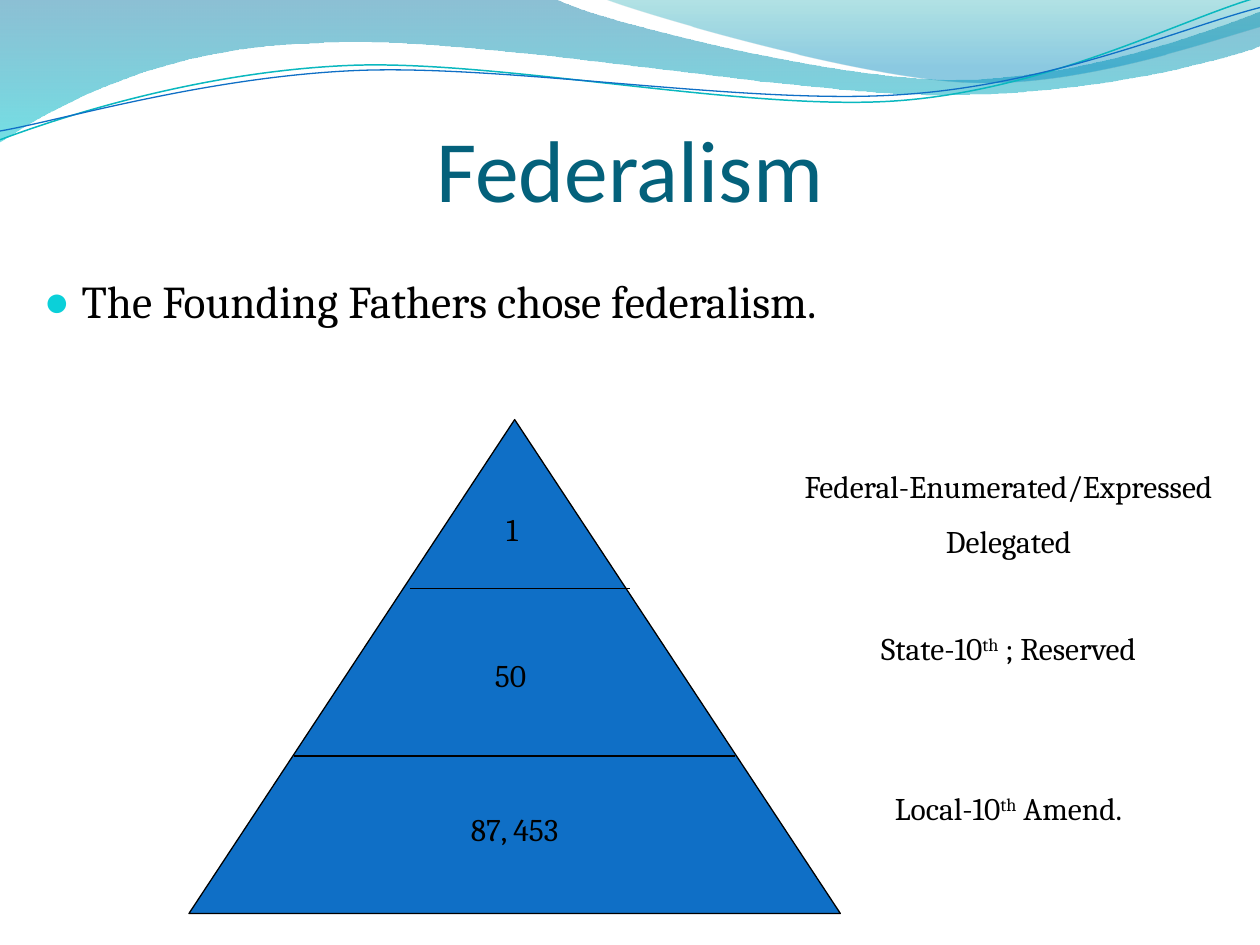
from dataclasses import dataclass

from lxml.etree import SubElement
from pptx import Presentation
from pptx.dml.color import RGBColor
from pptx.enum.shapes import MSO_CONNECTOR, MSO_SHAPE
from pptx.enum.text import MSO_ANCHOR, PP_ALIGN
from pptx.oxml import parse_xml
from pptx.oxml.ns import nsdecls, qn
from pptx.util import Pt

SCALE = 9144  # EMU in one px, 100 px to the inch


@dataclass(frozen=True)
class Theme:
    head: str = "Calibri"
    body: str = "Cambria"
    ink: str = "000000"
    title: str = "04617B"
    blue: str = "0F6FC6"
    teal: str = "0AB8BF"
    dot: str = "0BD0D9"
    big: int = 50
    mid: int = 26
    small: int = 18
    thin: float = 0.75


def emu(px):
    return round(px * SCALE)


def write(frame, lines, font, size, color, align=PP_ALIGN.LEFT, gaps=(),
          lead=None, bullet=None, indent=0):
    """Fill a frame; pieces between ^ marks are raised."""
    for i, line in enumerate(lines):
        para = frame.paragraphs[0] if i == 0 else frame.add_paragraph()
        para.alignment = align
        if gaps:
            para.space_before = Pt(gaps[i])
        if lead:
            para.line_spacing = lead
        for j, piece in enumerate(line.split("^")):
            run = para.add_run()
            run.text = piece
            run.font.name = font
            run.font.size = Pt(size)
            run.font.color.rgb = RGBColor.from_string(color)
            if j % 2:
                run.font._element.set("baseline", "30000")
        if bullet:
            props = para._p.get_or_add_pPr()
            props.set("marL", str(emu(indent)))
            props.set("indent", str(-emu(indent)))
            tint = SubElement(props, qn("a:buClr"))
            SubElement(tint, qn("a:srgbClr")).set("val", bullet)
            SubElement(props, qn("a:buSzPct")).set("val", "95000")
            SubElement(props, qn("a:buFont")).set("typeface", "Arial")
            SubElement(props, qn("a:buChar")).set("char", "●")


class Page:
    def __init__(self, slide, theme):
        self.slide = slide
        self.theme = theme

    def stroke(self, line, color, width):
        line.color.rgb = RGBColor.from_string(color)
        line.width = Pt(width)

    def curve(self, start, parts, closed):
        """Outline of lines (one point) and cubic curves (three points)."""
        build = self.slide.shapes.build_freeform(*map(emu, start), scale=1.0)
        build.add_line_segments(
            [tuple(map(emu, part[-1])) for part in parts], close=closed)
        shape = build.convert_to_shape()
        shape.shadow.inherit = False
        legs = list(shape._element.iter(qn("a:lnTo")))
        for leg, part in zip(legs, parts):
            if len(part) == 1:
                continue
            leg.tag = qn("a:cubicBezTo")
            leg.remove(leg[0])
            for x, y in part:
                spot = SubElement(leg, qn("a:pt"))
                spot.set("x", str(emu(x) - shape.left))
                spot.set("y", str(emu(y) - shape.top))
        return shape

    def wave(self, start, parts, stops):
        """Closed band with a see-through fade from top to bottom."""
        shape = self.curve(start, parts, True)
        shape.line.fill.background()
        marks = "".join(
            f'<a:gs pos="{pos * 1000}"><a:srgbClr val="{color}">'
            f'<a:alpha val="{alpha * 1000}"/></a:srgbClr></a:gs>'
            for pos, color, alpha in stops)
        fade = parse_xml(
            f'<a:gradFill {nsdecls("a")} rotWithShape="1"><a:gsLst>{marks}'
            '</a:gsLst><a:lin ang="5400000" scaled="0"/></a:gradFill>')
        shape._element.spPr.find(qn("a:custGeom")).addnext(fade)

    def thread(self, start, parts, color, width):
        shape = self.curve(start, parts, False)
        shape.fill.background()
        self.stroke(shape.line, color, width)

    def rule(self, left, right, y):
        line = self.slide.shapes.add_connector(
            MSO_CONNECTOR.STRAIGHT, emu(left), emu(y), emu(right), emu(y))
        self.stroke(line.line, self.theme.ink, self.theme.thin)
        SubElement(line._element.spPr, qn("a:effectLst"))

    def cone(self, box, label, drop):
        """Triangle whose label sits low, pushed by a top inset."""
        shape = self.slide.shapes.add_shape(
            MSO_SHAPE.FLOWCHART_EXTRACT, *map(emu, box))
        shape.shadow.inherit = False
        shape.fill.solid()
        shape.fill.fore_color.rgb = RGBColor.from_string(self.theme.blue)
        self.stroke(shape.line, self.theme.ink, self.theme.thin)
        frame = shape.text_frame
        frame.word_wrap = False
        frame.vertical_anchor = MSO_ANCHOR.MIDDLE
        frame.margin_top = emu(drop)
        write(frame, [label], self.theme.body, self.theme.small,
              self.theme.ink, align=PP_ALIGN.CENTER)

    def text(self, box, lines, size, font=None, color=None, wrap=True,
             anchor=MSO_ANCHOR.TOP, inset=(10, 5, 10, 5), **style):
        frame = self.slide.shapes.add_textbox(*map(emu, box)).text_frame
        frame.word_wrap = wrap
        frame.vertical_anchor = anchor
        (frame.margin_left, frame.margin_top,
         frame.margin_right, frame.margin_bottom) = map(emu, inset)
        write(frame, lines, font or self.theme.body, size,
              color or self.theme.ink, **style)


def main():
    deck = Presentation()
    deck.slide_width, deck.slide_height = emu(1000), emu(750)
    theme = Theme()
    page = Page(deck.slides.add_slide(deck.slide_layouts[6]), theme)

    page.wave((0, 0), [
        [(440, -1)],
        [(476, 17), (664, 63), (758, 63)],
        [(853, 63), (958, 26), (1000, 9)],
        [(1001, 36)],
        [(983, 44), (870, 76), (746, 75)],
        [(622, 75), (382, 28), (257, 34)],
        [(129, 36), (46, 83), (-1, 113)],
    ], [(0, "0074A1", 45), (100, "00C6CF", 55)])
    page.wave((479, -1), [
        [(509, 11), (682, 62), (769, 65)],
        [(856, 69), (961, 32), (1000, 21)],
        [(1000, 0)],
    ], [(0, "00A1A9", 30), (80, "008BBF", 45)])
    page.thread((0, 111), [
        [(48, 93), (158, 57), (277, 52)],
        [(395, 47), (593, 89), (713, 80)],
        [(833, 71), (938, 15), (998, -2)],
    ], theme.teal, 0.85)
    page.thread((0, 104), [
        [(47, 96), (164, 61), (283, 56)],
        [(403, 51), (597, 84), (717, 75)],
        [(836, 67), (941, 21), (1000, 6)],
    ], theme.blue, theme.thin)

    page.text((50, 77, 900, 98), ["Federalism"], theme.big, font=theme.head,
              color=theme.title, anchor=MSO_ANCHOR.BOTTOM,
              inset=(0, 5, 0, 0), align=PP_ALIGN.CENTER)
    page.text((25, 217, 950, 116), ["The Founding Fathers chose federalism."],
              theme.mid, lead=0.9, bullet=theme.dot, indent=30)

    page.cone((150, 333, 517, 392), "87, 453", 66)
    page.rule(325, 500, 467)
    page.rule(233, 583, 600)

    gap, pitch = 9.6, 30.1
    page.text((617, 366, 367, 313), [
        "Federal-Enumerated/Expressed",
        "Delegated",
        "State-10^th^ ; Reserved",
        "Local-10^th^ Amend.",
    ], theme.small, align=PP_ALIGN.CENTER,
        gaps=(0, gap, gap + pitch, gap + 2 * pitch))
    page.text((383, 516, 53, 50), ["50"], theme.small, wrap=False)
    page.text((392, 400, 37, 50), ["1"], theme.small, wrap=False)

    deck.save("out.pptx")


if __name__ == "__main__":
    main()
